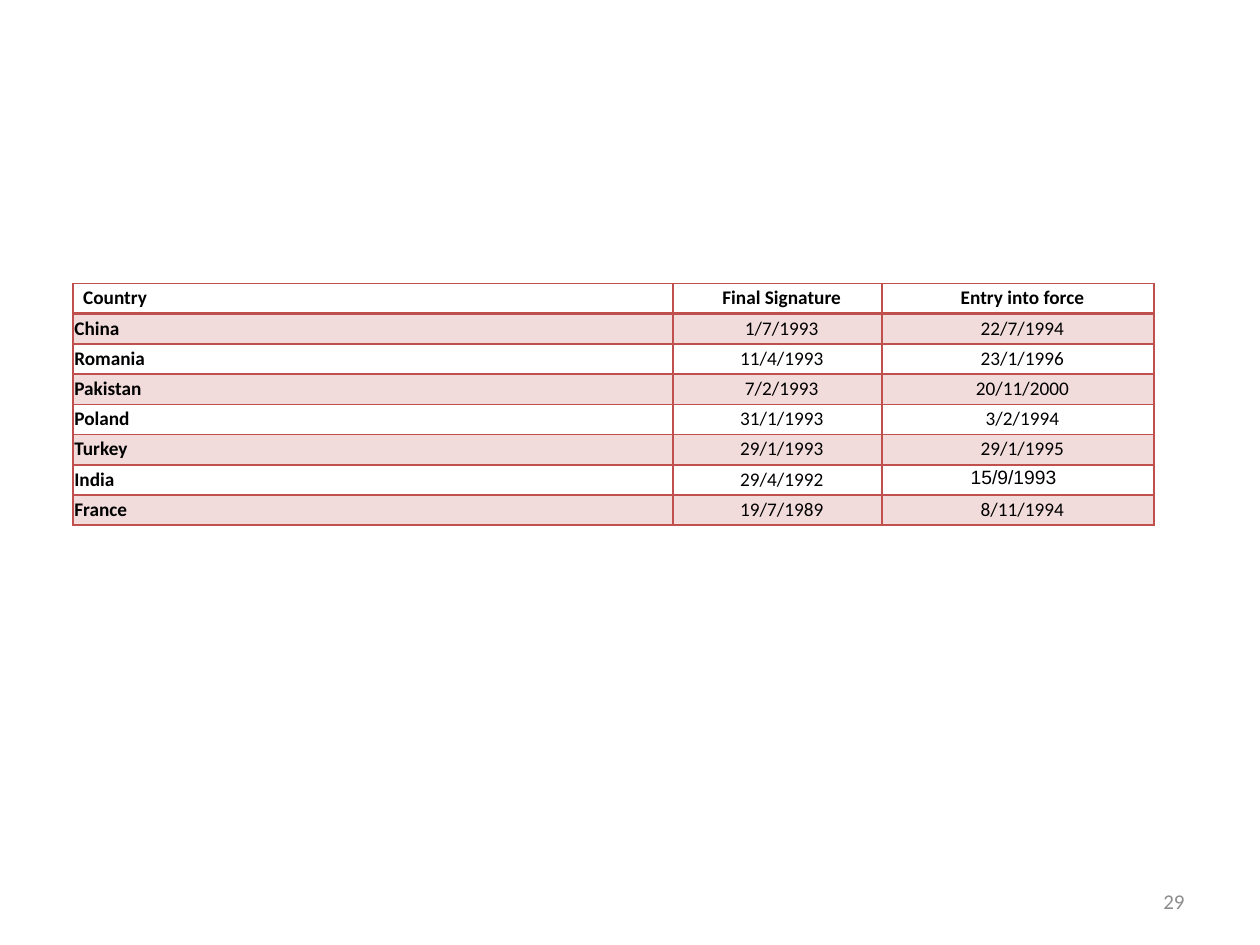
from typing import NamedTuple

from lxml.etree import SubElement
from pptx import Presentation
from pptx.dml.color import RGBColor
from pptx.enum.text import MSO_ANCHOR, PP_ALIGN
from pptx.oxml.ns import qn
from pptx.util import Inches, Pt

RED = RGBColor(0xC0, 0x50, 0x4D)
BLACK = RGBColor(0, 0, 0)
GRAY = RGBColor(0x8C, 0x8C, 0x8C)
FONT = "Calibri"


class Treaty(NamedTuple):
    country: str
    signature: str
    in_force: str
    rtl_date: bool = False


HEADER = Treaty("Country", "Final Signature", "Entry into force")
TREATIES = [
    Treaty("China", "1/7/1993", "22/7/1994"),
    Treaty("Romania", "11/4/1993", "23/1/1996"),
    Treaty("Pakistan", "7/2/1993", "20/11/2000"),
    Treaty("Poland", "31/1/1993", "3/2/1994"),
    Treaty("Turkey", "29/1/1993", "29/1/1995"),
    Treaty("India", "29/4/1992", "15/9/1993", rtl_date=True),
    Treaty("France", "19/7/1989", "8/11/1994"),
]
COL_WIDTHS = (4.76, 1.66, 2.16)
ROW_HEIGHT = 0.24


def write(tf, text: str, *, size=11, color=BLACK, bold=False,
          align=PP_ALIGN.LEFT, indent=0.0, spacing=None, rtl=False) -> None:
    p = tf.paragraphs[0]
    p.alignment = align
    p.line_spacing = spacing
    pPr = p._p.get_or_add_pPr()
    pPr.set("marL", str(Inches(indent)))
    pPr.set("indent", "0")
    r = p.add_run()
    r.text = text
    r.font.name, r.font.size, r.font.bold = FONT, Pt(size), bold
    r.font.color.rgb = color
    if rtl:
        pPr.set("rtl", "1")
        r._r.get_or_add_rPr().set("lang", "ar-SA")
        SubElement(r._r.rPr, qn("a:cs")).set("typeface", "Arial")


def set_borders(cell, top: float, bottom: float) -> None:
    tcPr = cell._tc.get_or_add_tcPr()
    for side, width in (("L", 1), ("R", 1), ("T", top), ("B", bottom)):
        ln = SubElement(tcPr, qn(f"a:ln{side}"), w=str(Pt(width)))
        fill = SubElement(ln, qn("a:solidFill"))
        SubElement(fill, qn("a:srgbClr"), val=str(RED))


def set_fill(cell, shaded: bool) -> None:
    if not shaded:
        cell.fill.background()
        return
    cell.fill.solid()
    cell.fill.fore_color.rgb = RED
    clr = cell._tc.tcPr.find(qn("a:solidFill")).find(qn("a:srgbClr"))
    SubElement(clr, qn("a:alpha"), val="20000")


def add_treaty_table(s) -> None:
    rows = [HEADER, *TREATIES]
    frame = s.shapes.add_table(
        len(rows), len(COL_WIDTHS), Inches(0.58), Inches(2.25),
        Inches(sum(COL_WIDTHS)), Inches(ROW_HEIGHT * len(rows)))
    table = frame.table
    table.first_row = table.horz_banding = False
    for column, width in zip(table.columns, COL_WIDTHS):
        column.width = Inches(width)
    for i, treaty in enumerate(rows):
        table.rows[i].height = Inches(ROW_HEIGHT)
        for j, text in enumerate(treaty[:3]):
            cell = table.cell(i, j)
            cell.margin_left = cell.margin_right = Inches(0.01)
            cell.margin_top = cell.margin_bottom = Inches(0.01)
            write(cell.text_frame, text, bold=i == 0 or j == 0,
                  align=PP_ALIGN.CENTER if j else PP_ALIGN.LEFT,
                  indent=0.07 if i == 0 or j else 0, spacing=1.07,
                  rtl=treaty.rtl_date and j == 2)
            set_borders(cell, top=2 if i == 1 else 1, bottom=2 if i == 0 else 1)
            set_fill(cell, shaded=i % 2 == 1)


def add_page_number(s, number: str) -> None:
    sp = s.shapes.add_textbox(Inches(7.17), Inches(6.95), Inches(2.33), Inches(0.4))
    tf = sp.text_frame
    tf.word_wrap = True
    tf.vertical_anchor = MSO_ANCHOR.MIDDLE
    write(tf, number, size=12, color=GRAY, align=PP_ALIGN.RIGHT)


def main() -> None:
    prs = Presentation()
    prs.slide_width, prs.slide_height = Inches(10), Inches(7.5)
    s = prs.slides.add_slide(prs.slide_layouts[6])
    add_page_number(s, "29")
    add_treaty_table(s)
    prs.save("out.pptx")


if __name__ == "__main__":
    main()
